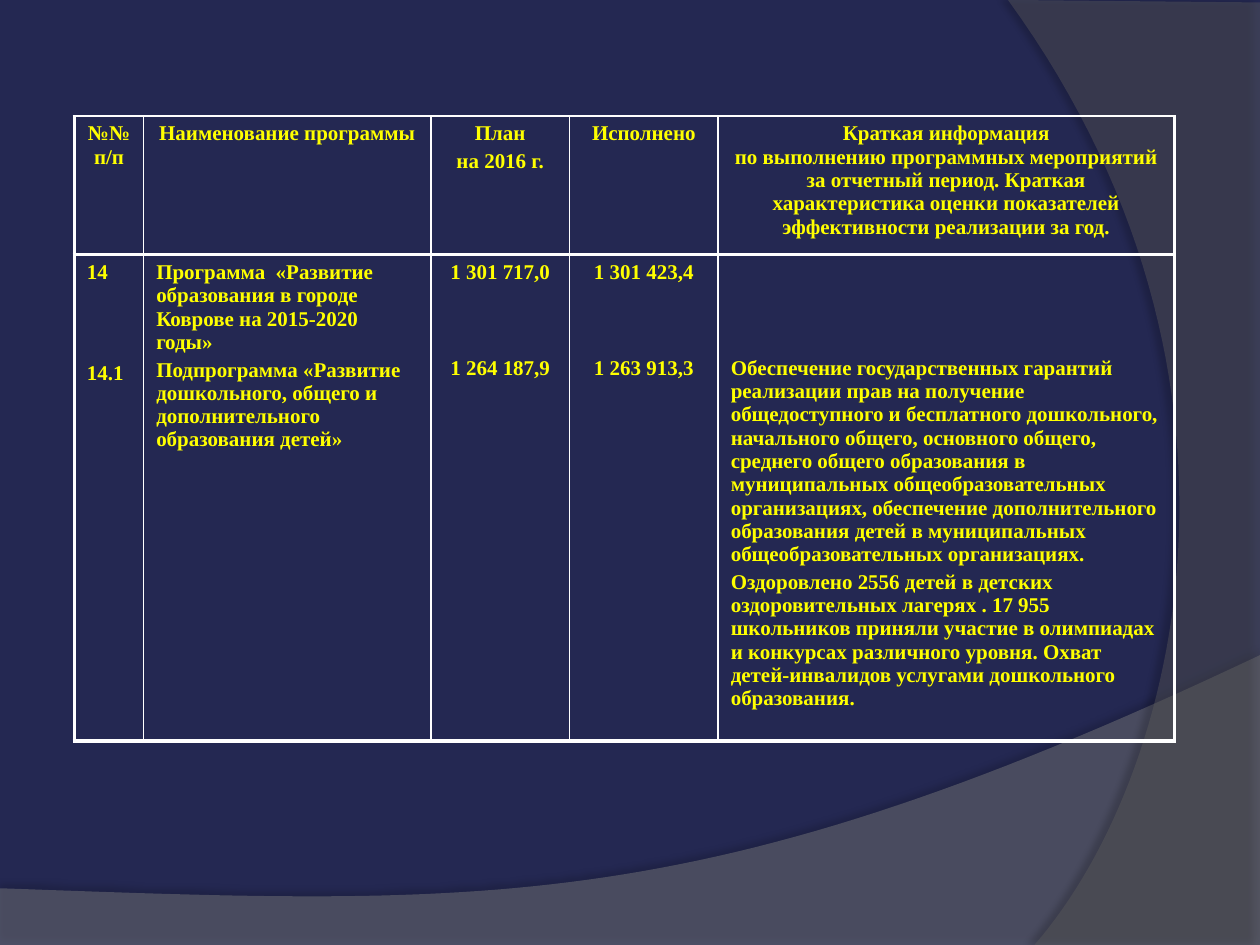
import pptx
import pptx.dml.color
import pptx.enum.text
import pptx.oxml
import pptx.util
from pptx.oxml.ns import nsdecls
from pptx.util import Inches

CENTER = pptx.enum.text.PP_ALIGN.CENTER
LEFT = pptx.enum.text.PP_ALIGN.LEFT
COLUMN_WIDTHS = [0.55, 2.28, 1.1, 1.18, 3.62]
ROW_HEIGHTS = [1.1, 3.86]
THIN, THICK = 1, 2.25

# Each cell: paragraphs, alignment, space before later paragraphs (pt), top margin (in)
HEADER = [
    (["№№ п/п"], CENTER, 0, 0.05),
    (["Наименование программы"], CENTER, 0, 0.05),
    (["План", "на 2016 г."], CENTER, 2.4, 0.05),
    (["Исполнено"], CENTER, 0, 0.05),
    (["Краткая информация",
      "по выполнению программных мероприятий за отчетный период. Краткая "
      "характеристика оценки показателей эффективности реализации за год."],
     CENTER, 0, 0.05),
]
PROGRAMME = [
    (["14", "14.1"], LEFT, 44.4, 0.05),
    (["Программа  «Развитие образования в городе Коврове на 2015-2020 годы»",
      "Подпрограмма «Развитие дошкольного, общего и дополнительного образования детей»"],
     LEFT, 2.4, 0.05),
    (["1 301 717,0", "1 264 187,9"], CENTER, 41.5, 0.05),
    (["1 301 423,4", "1 263 913,3"], CENTER, 41.5, 0.05),
    (["Обеспечение государственных гарантий реализации прав на получение "
      "общедоступного и бесплатного дошкольного, начального общего, основного общего, "
      "среднего общего образования в муниципальных общеобразовательных организациях, "
      "обеспечение дополнительного образования детей в муниципальных "
      "общеобразовательных организациях.",
      "Оздоровлено 2556 детей в детских оздоровительных лагерях . 17 955 школьников "
      "приняли участие в олимпиадах и конкурсах различного уровня. Охват "
      "детей-инвалидов услугами дошкольного образования."], LEFT, 2.4, 0.81),
]


def color(hex_string):
    return pptx.dml.color.RGBColor.from_string(hex_string)


def curve_points(start, control_1, control_2, end, steps=60):
    """Points along a cubic curve, without its start."""
    points = []
    for step in range(1, steps + 1):
        t = step / steps
        weights = ((1 - t) ** 3, 3 * t * (1 - t) ** 2, 3 * t * t * (1 - t), t ** 3)
        corners = (start, control_1, control_2, end)
        points.append(tuple(sum(w * corner[axis] for w, corner in zip(weights, corners))
                            for axis in (0, 1)))
    return points


def add_wave(slide, points, fill, opacity, shadow_opacity, distance, direction):
    """Translucent outline with a soft shadow."""
    corners = [(Inches(x), Inches(y)) for x, y in points]
    builder = slide.shapes.build_freeform(*corners[0], scale=1.0)
    builder.add_line_segments(corners[1:], close=True)
    shape = builder.convert_to_shape()
    shape.line.fill.background()
    shape.fill.solid()
    shape.fill.fore_color.rgb = color(fill)
    fill_color = shape.fill._xPr.find(".//" + pptx.oxml.ns.qn("a:srgbClr"))
    fill_color.append(pptx.oxml.parse_xml(
        f'<a:alpha {nsdecls("a")} val="{opacity * 1000}"/>'))
    shape._element.spPr.append(pptx.oxml.parse_xml(
        f'<a:effectLst {nsdecls("a")}><a:outerShdw blurRad="{pptx.util.Pt(4)}" '
        f'dist="{pptx.util.Pt(distance)}" dir="{direction * 60000}" algn="ctr" '
        f'rotWithShape="0"><a:srgbClr val="000000"><a:alpha '
        f'val="{shadow_opacity * 1000}"/></a:srgbClr></a:outerShdw></a:effectLst>'))


def add_background(slide, width, height):
    slide.background.fill.solid()
    slide.background.fill.fore_color.rgb = color("242852")
    bottom = [(0, 7.05), (0, height), (width, height), (width, 5.2)]
    bottom += curve_points((width, 5.2), (5.59, 7.29), (3.91, 7.19), (0, 7.05))
    add_wave(slide, bottom, "7F7F7F", 45, 35, 3.5, 270)
    side = [(width, 0.02), (width, height), (8.21, height)]
    side += curve_points((8.21, height), (9.35, 6.19), (10.18, 3), (8, 0))
    add_wave(slide, side, "5E5E5E", 40, 45, 4, 180)


def set_borders(cell, left, right, top, bottom):
    properties = cell._tc.get_or_add_tcPr()
    for index, (side, width) in enumerate(zip("LRTB", (left, right, top, bottom))):
        properties.insert(index, pptx.oxml.parse_xml(
            f'<a:ln{side} {nsdecls("a")} w="{pptx.util.Pt(width)}"><a:solidFill>'
            f'<a:srgbClr val="FFFFFF"/></a:solidFill></a:ln{side}>'))


def fill_cell(cell, texts, alignment, space_before, margin_top):
    cell.fill.background()
    cell.margin_top = Inches(margin_top)
    cell.text_frame.text = "\n".join(texts)
    for index, paragraph in enumerate(cell.text_frame.paragraphs):
        paragraph.alignment = alignment
        paragraph.space_before = pptx.util.Pt(space_before if index else 0)
        for run in paragraph.runs:
            run.font.name = "Times New Roman"
            run.font.size = pptx.util.Pt(12)
            run.font.bold = True
            run.font.color.rgb = color("FFFF00")


def add_programme_table(slide, left, top):
    rows = [HEADER, PROGRAMME]
    table = slide.shapes.add_table(
        len(rows), len(COLUMN_WIDTHS), Inches(left), Inches(top),
        Inches(sum(COLUMN_WIDTHS)), Inches(sum(ROW_HEIGHTS))).table
    table.horz_banding = False
    for column, width in zip(table.columns, COLUMN_WIDTHS):
        column.width = Inches(width)
    last = len(COLUMN_WIDTHS) - 1
    for row_index, row in enumerate(rows):
        table.rows[row_index].height = Inches(ROW_HEIGHTS[row_index])
        for column_index, content in enumerate(row):
            cell = table.cell(row_index, column_index)
            fill_cell(cell, *content)
            set_borders(cell,
                        left=THICK if column_index == 0 else THIN,
                        right=THICK if column_index == last else THIN,
                        top=THICK if row_index else THIN,
                        bottom=THICK)


def main():
    presentation = pptx.Presentation()
    presentation.slide_width, presentation.slide_height = Inches(10), Inches(7.5)
    slide = presentation.slides.add_slide(presentation.slide_layouts[6])
    add_background(slide, 10, 7.5)
    add_programme_table(slide, 0.59, 0.92)
    presentation.save("out.pptx")


if __name__ == "__main__":
    main()
